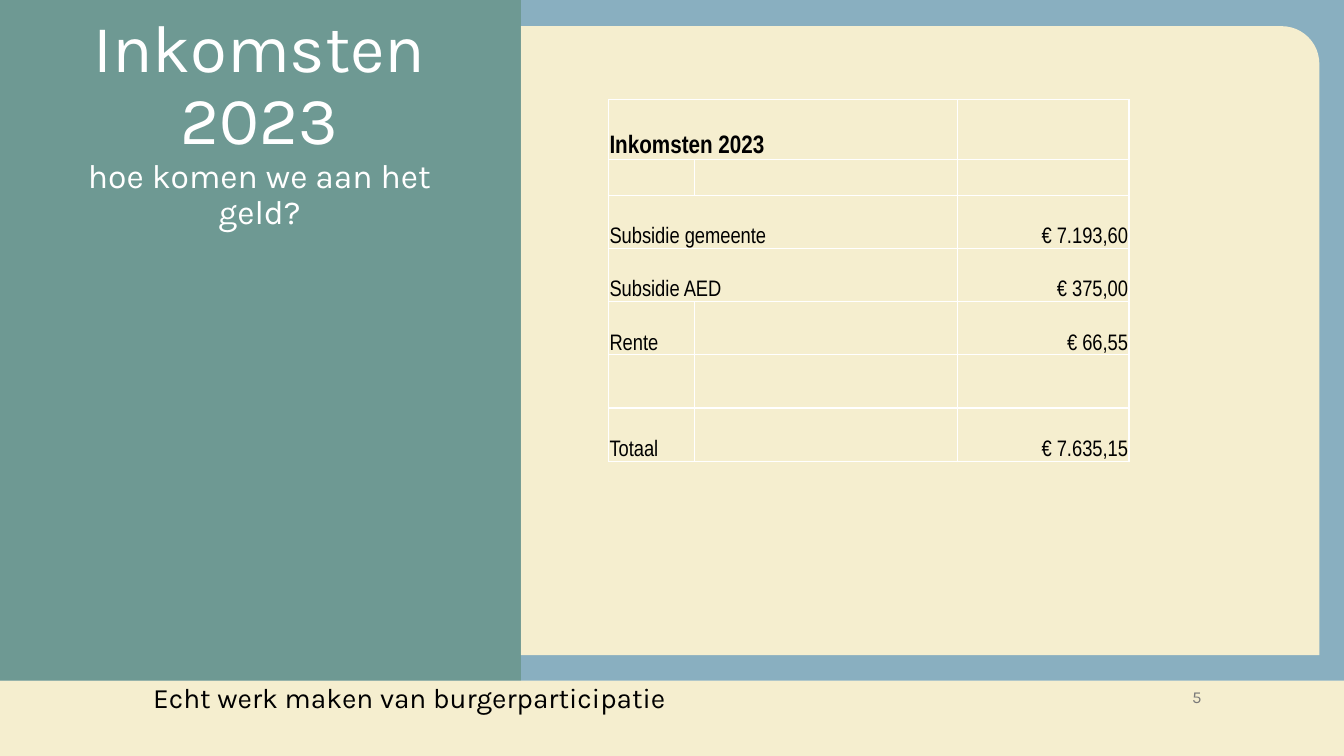
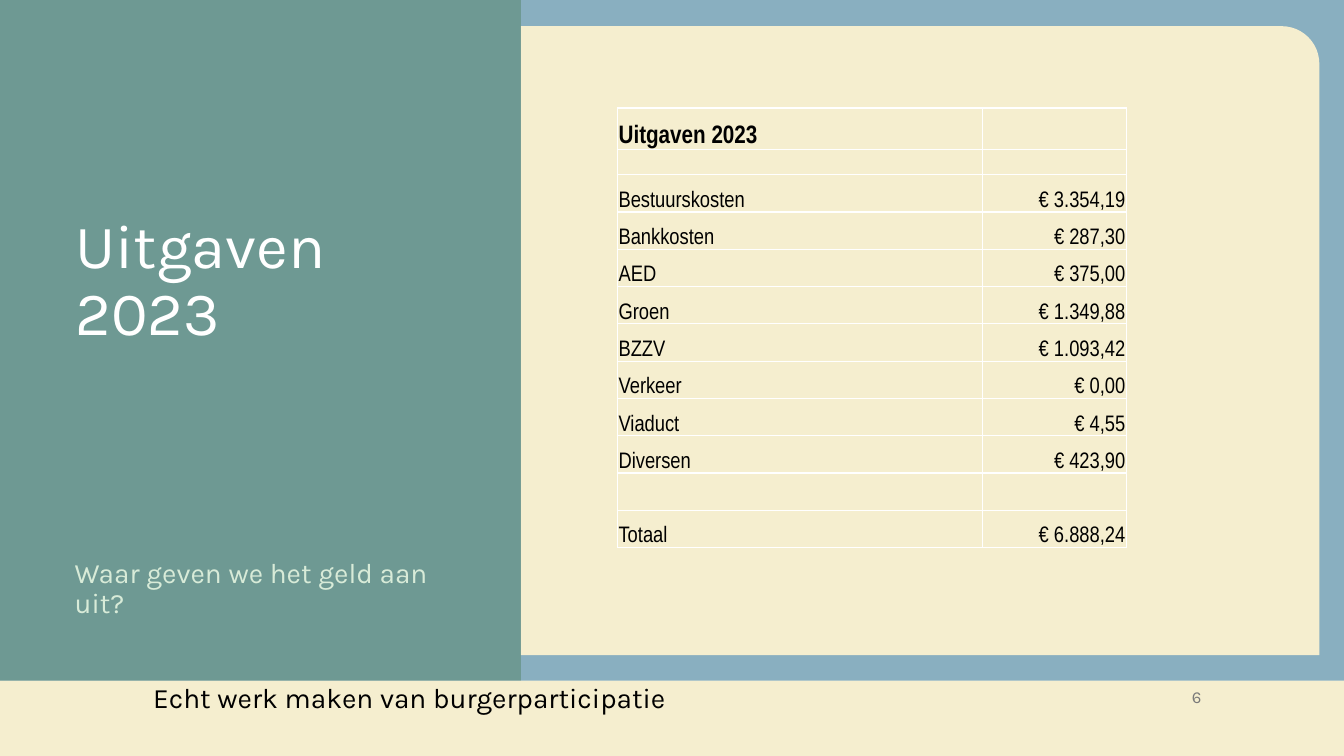
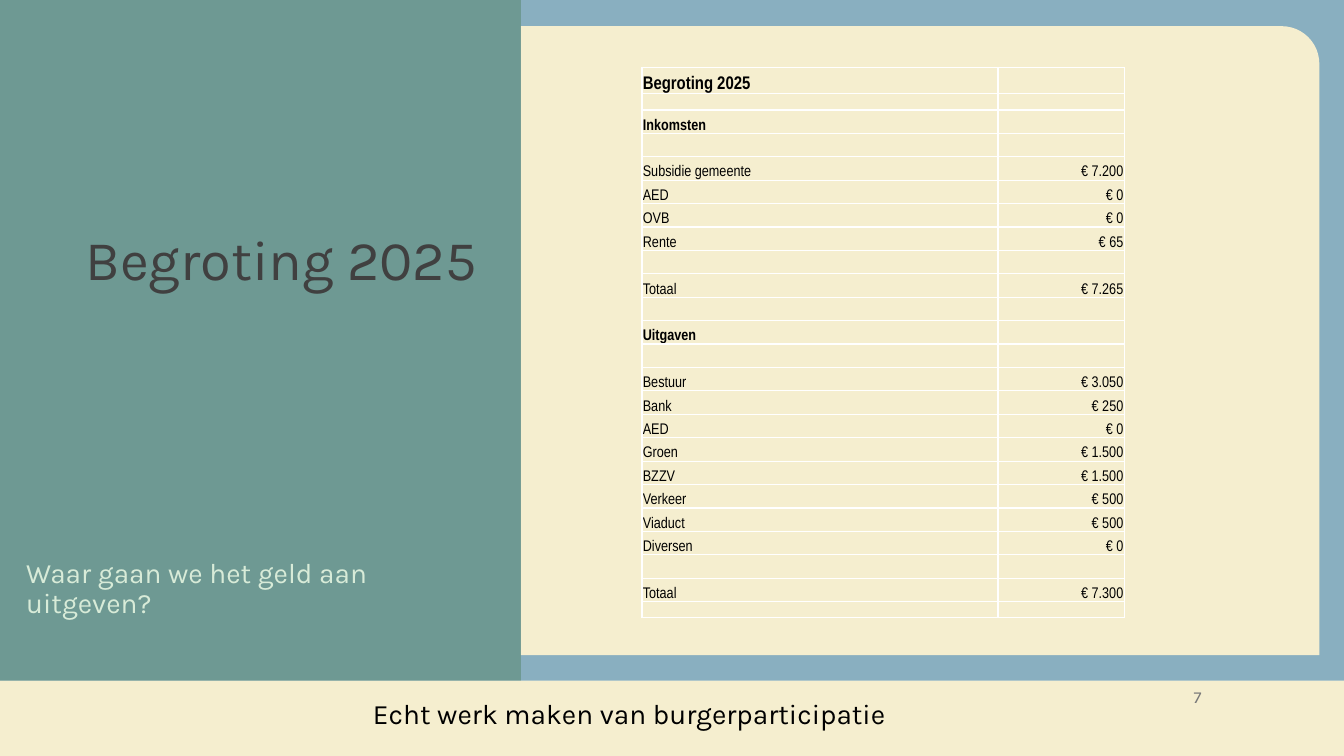
from dataclasses import dataclass

from lxml import etree
from pptx import Presentation
from pptx.dml.color import RGBColor
from pptx.enum.shapes import MSO_SHAPE
from pptx.enum.text import MSO_ANCHOR, PP_ALIGN
from pptx.oxml.ns import qn
from pptx.util import Cm, Pt

RECT, ROUND_ONE = MSO_SHAPE.RECTANGLE, MSO_SHAPE.ROUND_1_RECTANGLE
TOP, MIDDLE, BOTTOM = MSO_ANCHOR.TOP, MSO_ANCHOR.MIDDLE, MSO_ANCHOR.BOTTOM
LEFT, CENTER, RIGHT = PP_ALIGN.LEFT, PP_ALIGN.CENTER, PP_ALIGN.RIGHT


@dataclass(frozen=True)
class Theme:
    cream: str = "F5EECF"
    blue: str = "156082"
    green: str = "366B37"
    white: str = "FFFFFF"
    black: str = "000000"
    charcoal: str = "404040"
    mint: str = "D8EBD8"
    grey: str = "797979"
    font: str = "Karla"
    table_font: str = "Arial Narrow"
    body_size: int = 20
    subtitle_size: int = 24
    number_size: int = 12
    blank_size: int = 6


THEME = Theme()
WIDTH, HEIGHT = 33.87, 19.05
BAND_TOP, SIDE_WIDTH = 17.15, 13.13
FOOTER = "Echt werk maken van burgerparticipatie"

# Shared backdrop: preset, box, colour, opacity in percent
BACKDROP = [
    (RECT, (0, BAND_TOP, WIDTH, HEIGHT - BAND_TOP), THEME.cream, 100),
    (RECT, (0, 0, WIDTH, BAND_TOP), THEME.blue, 50),
    (ROUND_ONE, (SIDE_WIDTH, 0.66, 20.12, 15.85), THEME.cream, 100),
    (RECT, (0, 0, SIDE_WIDTH, BAND_TOP), THEME.green, 32),
]

# Content: a ledger row is (label, amount); a label without amount is a heading
BLANK = ("", "")
PAGES = [
    {
        "number": "5",
        "footer_at": (3.73, 17.02),
        "title": "Inkomsten 2023\vhoe komen we aan het geld?",
        "title_box": (0.94, 0.66, 11.2, 4.88),
        "title_style": (48, THEME.white, CENTER),
        "question": None,
        "ledger_at": (15.34, 2.51),
        "columns": (2.16, 6.63, 4.32),
        "merged_rows": (0, 2, 3),
        "heights": {0: 1.5, 1: 0.91},
        "row_height": 1.34,
        "sizes": (18, 16),
        "rows": [
            ("Inkomsten 2023", ""), BLANK,
            ("Subsidie gemeente", "€ 7.193,60"), ("Subsidie AED", "€ 375,00"),
            ("Rente", "€ 66,55"), BLANK, ("Totaal", "€ 7.635,15"),
        ],
    },
    {
        "number": "6",
        "footer_at": (3.73, 17.02),
        "title": "Uitgaven 2023",
        "title_box": (1.65, 0.66, 10.49, 12.9),
        "title_style": (44, THEME.white, LEFT),
        "question": "Waar geven we het geld aan uit?",
        "question_box": (1.63, 13.97, 10.52, 2.54),
        "ledger_at": (15.57, 2.72),
        "columns": (9.2, 3.61),
        "merged_rows": (),
        "heights": {0: 1.04, 1: 0.64},
        "row_height": 0.94,
        "sizes": (18, 16),
        "rows": [
            ("Uitgaven 2023", ""), BLANK,
            ("Bestuurskosten", "€ 3.354,19"), ("Bankkosten", "€ 287,30"),
            ("AED", "€ 375,00"), ("Groen", "€ 1.349,88"),
            ("BZZV", "€ 1.093,42"), ("Verkeer", "€ 0,00"),
            ("Viaduct", "€ 4,55"), ("Diversen", "€ 423,90"),
            BLANK, ("Totaal", "€ 6.888,24"),
        ],
    },
    {
        "number": "7",
        "footer_at": (9.27, 17.42),
        "title": "Begroting 2025",
        "title_box": (1.9, 0.69, 10.49, 11.86),
        "title_style": (40, THEME.charcoal, LEFT),
        "question": "Waar gaan we het geld aan uitgeven?",
        "question_box": (0.41, 13.97, 12.14, 2.54),
        "ledger_at": (16.18, 1.7),
        "columns": (8.97, 3.18),
        "merged_rows": (),
        "heights": {0: 0.66, 1: 0.41, 23: 0.41},
        "row_height": 0.59,
        "sizes": (13, 11),
        "rows": [
            ("Begroting 2025", ""), BLANK, ("Inkomsten", ""), BLANK,
            ("Subsidie gemeente", "€ 7.200"), ("AED", "€ 0"),
            ("OVB", "€ 0"), ("Rente", "€ 65"), BLANK,
            ("Totaal", "€ 7.265"), BLANK, ("Uitgaven", ""), BLANK,
            ("Bestuur", "€ 3.050"), ("Bank", "€ 250"), ("AED", "€ 0"),
            ("Groen", "€ 1.500"), ("BZZV", "€ 1.500"), ("Verkeer", "€ 500"),
            ("Viaduct", "€ 500"), ("Diversen", "€ 0"), BLANK,
            ("Totaal", "€ 7.300"), BLANK,
        ],
    },
]


def style_text(frame, text, size, color, align=LEFT, font=THEME.font, bold=False):
    paragraph = frame.paragraphs[0]
    paragraph.text = text
    paragraph.alignment = align
    for run in paragraph.runs:
        run.font.name = font
        run.font.size = Pt(size)
        run.font.bold = bold
        run.font.color.rgb = RGBColor.from_string(color)
    return paragraph


def add_text(slide, box, text, size, color, align=LEFT, anchor=MIDDLE,
             insets=(0.25, 0.13), spacing=1.0):
    frame = slide.shapes.add_textbox(*map(Cm, box)).text_frame
    frame.word_wrap = True
    frame.vertical_anchor = anchor
    frame.margin_left = frame.margin_right = Cm(insets[0])
    frame.margin_top = frame.margin_bottom = Cm(insets[1])
    paragraph = style_text(frame, text, size, color, align)
    paragraph.line_spacing = spacing
    return paragraph


deck = Presentation()
deck.slide_width, deck.slide_height = Cm(WIDTH), Cm(HEIGHT)

for page in PAGES:
    slide = deck.slides.add_slide(deck.slide_layouts[6])

    # Bands and panel
    for preset, box, color, opacity in BACKDROP:
        band = slide.shapes.add_shape(preset, *map(Cm, box))
        band.shadow.inherit = False
        band.line.fill.background()
        band.fill.solid()
        band.fill.fore_color.rgb = RGBColor.from_string(color)
        if preset == ROUND_ONE:
            band.adjustments[0] = 0.06
        if opacity < 100:
            tint = band.fill._xPr.find(qn("a:solidFill"))[0]
            etree.SubElement(tint, qn("a:alpha")).set("val", str(opacity * 1000))

    # Footer and page number
    add_text(slide, (*page["footer_at"], 20.5, 1.12), FOOTER,
             THEME.body_size, THEME.black, insets=(0.13, 0.13))
    add_text(slide, (29.82, 17.25, 0.46, 0.64), page["number"],
             THEME.number_size, THEME.grey, RIGHT, insets=(0, 0))

    # Title, with a smaller second line where there is one, and question
    title = add_text(slide, page["title_box"], page["title"],
                     *page["title_style"], spacing=0.9)
    for subtitle in title.runs[1:]:
        subtitle.font.size = Pt(THEME.subtitle_size)
    if page["question"]:
        add_text(slide, page["question_box"], page["question"],
                 THEME.body_size, THEME.mint, anchor=TOP, spacing=0.9)

    # Ledger
    rows, columns = page["rows"], page["columns"]
    heights = [page["heights"].get(i, page["row_height"]) for i in range(len(rows))]
    ledger = slide.shapes.add_table(
        len(rows), len(columns), *map(Cm, page["ledger_at"]),
        Cm(sum(columns)), Cm(sum(heights))).table
    ledger.first_row = ledger.horz_banding = False
    for column, width in zip(ledger.columns, columns):
        column.width = Cm(width)
    heading_size, row_size = page["sizes"]
    for i, (label, amount) in enumerate(rows):
        ledger.rows[i].height = Cm(heights[i])
        entries = [label] + [""] * (len(columns) - 2) + [amount]
        for j, entry in enumerate(entries):
            cell = ledger.cell(i, j)
            cell.fill.background()
            cell.vertical_anchor = BOTTOM
            cell.margin_left = cell.margin_right = cell.margin_top = Cm(0.02)
            cell.margin_bottom = 0
            paragraph = style_text(
                cell.text_frame, entry, row_size if i else heading_size,
                THEME.black, RIGHT if j == len(columns) - 1 else LEFT,
                THEME.table_font, bold=not amount)
            if not entry:
                end = paragraph._p.get_or_add_endParaRPr()
                end.set("sz", str(THEME.blank_size * 100))
    for i in page["merged_rows"]:
        ledger.cell(i, 0).merge(ledger.cell(i, 1))

deck.save("out.pptx")
